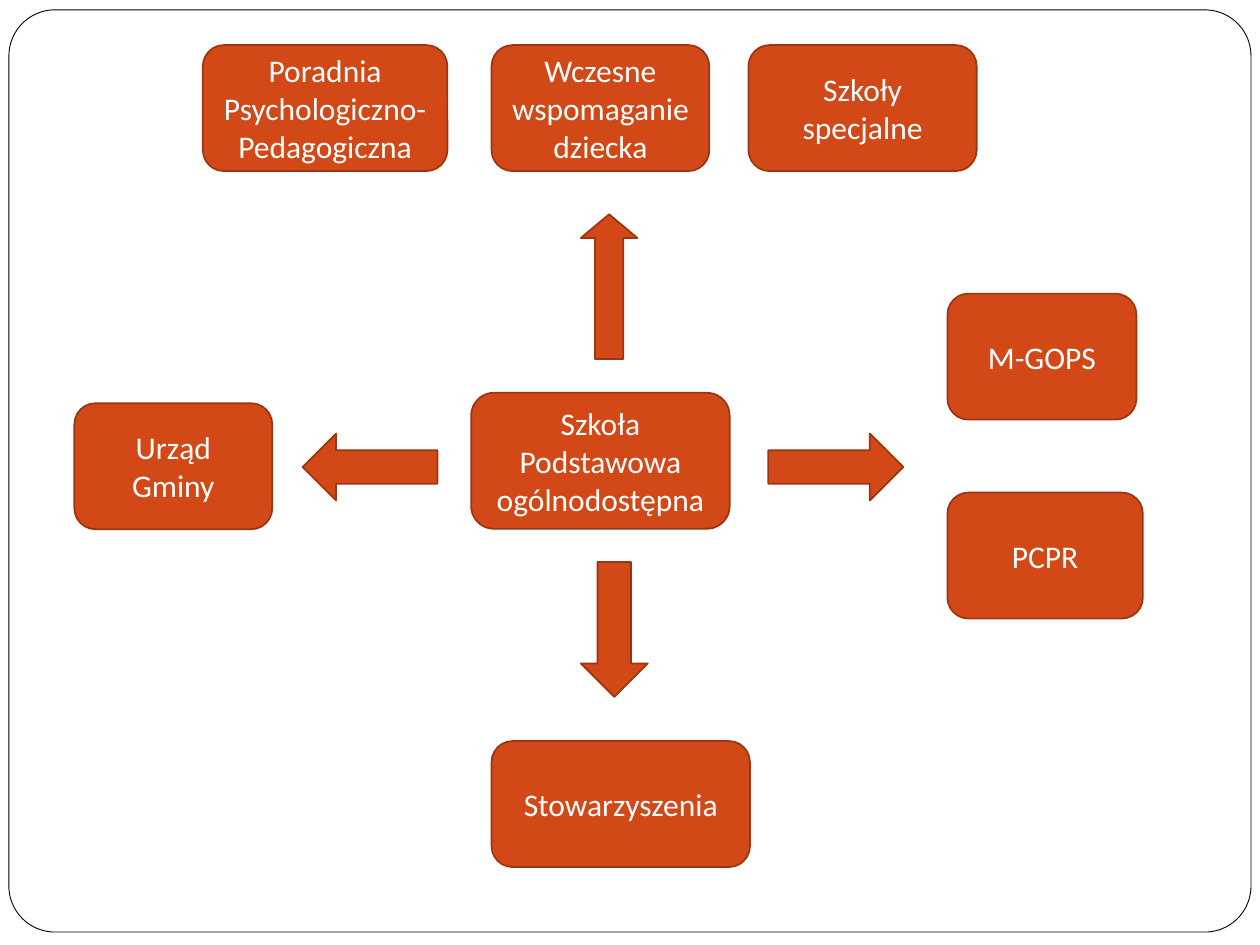
from dataclasses import dataclass

from pptx import Presentation
from pptx.dml.color import RGBColor
from pptx.enum.shapes import MSO_SHAPE
from pptx.enum.text import MSO_ANCHOR, PP_ALIGN
from pptx.util import Cm, Pt


@dataclass(frozen=True)
class Theme:
    paper: RGBColor = RGBColor(0xFF, 0xFF, 0xFF)
    frame_line: RGBColor = RGBColor(0x00, 0x00, 0x00)
    accent: RGBColor = RGBColor(0xD3, 0x48, 0x17)
    accent_line: RGBColor = RGBColor(0x9C, 0x35, 0x11)
    text: RGBColor = RGBColor(0xFF, 0xFF, 0xFF)
    font: str = "Calibri"
    text_size: Pt = Pt(18)
    thin: Pt = Pt(0.5)
    regular: Pt = Pt(1)


class Diagram:
    def __init__(self, slide, theme):
        self.slide = slide
        self.theme = theme

    def outline(self, kind, bounds, fill, line, width):
        shape = self.slide.shapes.add_shape(kind, *(Cm(length) for length in bounds))
        shape.shadow.inherit = False
        shape.fill.solid()
        shape.fill.fore_color.rgb = fill
        shape.line.color.rgb = line
        shape.line.width = width
        return shape

    def frame(self, *bounds):
        theme = self.theme
        shape = self.outline(MSO_SHAPE.ROUNDED_RECTANGLE, bounds,
                             theme.paper, theme.frame_line, theme.thin)
        shape.adjustments[0] = 0.05

    def arrow(self, kind, *bounds):
        theme = self.theme
        return self.outline(kind, bounds, theme.accent, theme.accent_line, theme.regular)

    def box(self, text, left, top, width, height=2.54):
        theme = self.theme
        shape = self.outline(MSO_SHAPE.ROUNDED_RECTANGLE, (left, top, width, height),
                             theme.accent, theme.accent_line, theme.regular)
        text_frame = shape.text_frame
        text_frame.word_wrap = True
        text_frame.vertical_anchor = MSO_ANCHOR.MIDDLE
        paragraph = text_frame.paragraphs[0]
        paragraph.alignment = PP_ALIGN.CENTER
        run = paragraph.add_run()
        run.text = text
        run.font.name = theme.font
        run.font.size = theme.text_size
        run.font.color.rgb = theme.text


def main():
    presentation = Presentation()
    presentation.slide_width = Cm(25.4)
    presentation.slide_height = Cm(19.05)
    slide = presentation.slides.add_slide(presentation.slide_layouts[6])
    diagram = Diagram(slide, Theme())

    diagram.frame(0.18, 0.2, 25.04, 18.59)
    diagram.box("Szkoła Podstawowa ogólnodostępna", 9.5, 7.92, 5.21, 2.74)

    arrow_length, arrow_breadth = 2.72, 1.35
    for kind, left in ((MSO_SHAPE.LEFT_ARROW, 6.1), (MSO_SHAPE.RIGHT_ARROW, 15.49)):
        diagram.arrow(kind, left, 8.74, arrow_length, arrow_breadth)
    up_arrow = diagram.arrow(MSO_SHAPE.UP_ARROW, 11.71, 4.32, 1.14, 2.92)
    up_arrow.adjustments[1] = 0.42
    diagram.arrow(MSO_SHAPE.DOWN_ARROW, 11.71, 11.33, arrow_breadth, arrow_length)

    top_row = (
        ("Poradnia Psychologiczno-Pedagogiczna", 4.09, 4.93),
        ("Wczesne wspomaganie dziecka", 9.91, 4.39),
        ("Szkoły specjalne", 15.09, 4.6),
    )
    for text, left, width in top_row:
        diagram.box(text, left, 0.91, width)

    right_column = (("M-GOPS", 5.92, 3.81), ("PCPR", 9.93, 3.94))
    for text, top, width in right_column:
        diagram.box(text, 19.1, top, width)

    diagram.box("Stowarzyszenia", 9.91, 14.94, 5.21)
    diagram.box("Urząd Gminy", 1.5, 8.13, 3.99)

    presentation.save("out.pptx")


if __name__ == "__main__":
    main()
